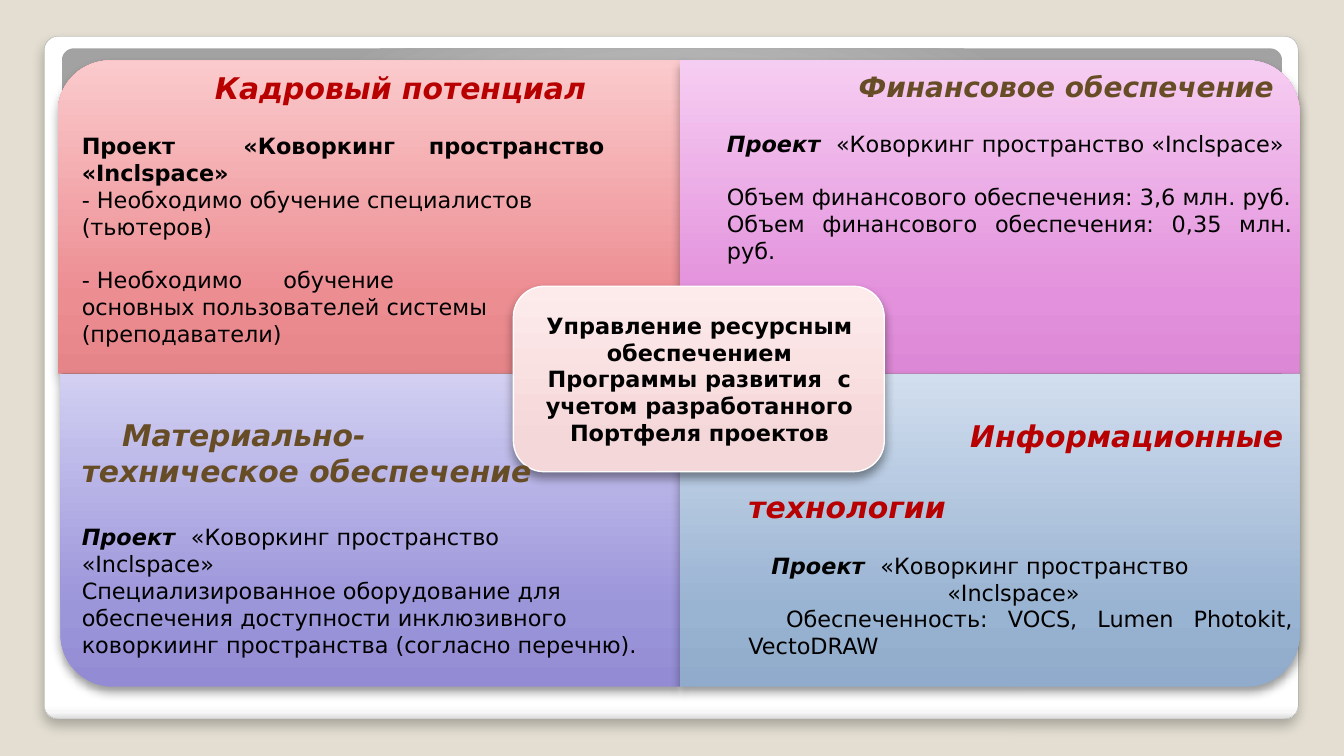
import pptx
import pptx.util
import pptx.dml.color
import pptx.enum.shapes
import pptx.enum.text
import pptx.oxml
import pptx.oxml.ns

Inches, Pt = pptx.util.Inches, pptx.util.Pt
RGB = pptx.dml.color.RGBColor
SHAPE = pptx.enum.shapes.MSO_SHAPE
ALIGN = pptx.enum.text.PP_ALIGN
FONT = "DejaVu Sans"
COLORS = {"bg": "E3DED1", "black": "000000", "white": "FFFFFF", "edge": "A4A4A4",
          "red": "B80000", "brown": "674D26"}
GRADIENTS = {
    "frame": [(0, "FFFFFF"), (98, "FFFFFF"), (99, "F7F7F7"), (100, "DADADA")],
    "header": [(0, "FFFFFF"), (55, "E1E1E1"), (100, "A2A2A2")],
    "staff": [(0, "E68589"), (25, "EC8D92"), (100, "FBCACC")],
    "finance": [(0, "DD88D6"), (25, "E391DC"), (100, "F6CDF2")],
    "equipment": [(0, "938CD4"), (25, "9B95DA"), (100, "D2CFF2")],
    "technology": [(0, "90ABCB"), (25, "99B3D2"), (100, "D1DEEE")],
    "center": [(0, "F4D7D8"), (25, "F6D9DA"), (100, "FDEBEC")],
}
UP = '<a:lin ang="16200000" scaled="0"/>'
DOWN = '<a:lin ang="5400000" scaled="0"/>'
RADIAL = '<a:path path="circle"><a:fillToRect l="50000" t="175000" r="50000" b="-75000"/></a:path>'
PANEL_SHADOW = (40, 5.2, 3)

QUADRANTS = [
    ("staff", 0.43, 0.45, 4.69, 270),
    ("finance", 5.06, 0.45, 4.61, 0),
    ("equipment", 0.45, 2.78, 4.61, 180),
    ("technology", 5.06, 2.78, 4.61, 90),
]
QUADRANT_H = 2.33

L, C, J = ALIGN.LEFT, ALIGN.CENTER, ALIGN.JUSTIFY
PROJECT = ("Проект  ", "bi")
SPACE_NAME = "«Коворкинг пространство «Inclspace»"
TEXTS = [
    ((5.31, 0.47, 4.41, 1.77), [
        dict(runs=[("Финансовое обеспечение", "bi")], size=15, color="brown", indent=0.98),
        dict(runs=[PROJECT, (SPACE_NAME, "")], align=J, before=14.2),
        dict(runs=[("Объем финансового обеспечения: 3,6 млн. руб.", "")], align=J, before=14.2),
        dict(runs=[("Объем финансового обеспечения: 0,35 млн. руб.", "")], align=J),
    ]),
    ((5.47, 3.06, 4.25, 2.05), [
        dict(runs=[("Информационные", "bi")], size=16, color="red", indent=1.65),
        dict(runs=[("технологии", "bi")], size=16, color="red", before=19),
        dict(runs=[PROJECT, ("«Коворкинг пространство", "")], align=J, indent=0.17, before=14.4),
        dict(runs=[("«Inclspace»", "")], align=J, indent=1.48),
        dict(runs=[("Обеспеченность: VOCS, Lumen Photokit, VectoDRAW", "")], align=J, indent=0.28),
    ]),
    ((0.51, 0.47, 4.09, 2.19), [
        dict(runs=[("Кадровый потенциал", "bi")], size=16, color="red", indent=0.99),
        dict(runs=[("Проект  " + SPACE_NAME, "b")], align=J, before=14.2),
        dict(runs=[("- Необходимо обучение специалистов (тьютеров)", "")]),
        dict(runs=[("- Необходимо\tобучение\nосновных пользователей системы (преподаватели)", "")],
             before=14.4, tab=1.42),
    ]),
    ((0.51, 3.05, 4.49, 1.92), [
        dict(runs=[("Материально-\nтехническое обеспечение", "bi")],
             size=16, color="brown", indent=0.3),
        dict(runs=[PROJECT, ("«Коворкинг пространство ", "")], before=19),
        dict(runs=[("«Inclspace» ", "")]),
        dict(runs=[("Специализированное оборудование для", "")]),
        dict(runs=[("обеспечения доступности инклюзивного коворкиинг пространства "
                    "(согласно перечню).", "")]),
    ]),
]
CENTER_TEXT = [dict(runs=[("Управление ресурсным обеспечением Программы развития  с "
                           "учетом разработанного Портфеля проектов", "b")], align=C)]


def xml(tag, body, attrs=""):
    ns = pptx.oxml.ns.nsdecls("a")
    return pptx.oxml.parse_xml(f"<a:{tag} {ns} {attrs}>{body}</a:{tag}>")


def add_panel(kind, box, name, direction=UP, shadow=None, line=None, rotation=0, radius=None):
    sp = slide.shapes.add_shape(kind, *map(Inches, box))
    sp.rotation = rotation
    if radius is not None:
        sp.adjustments[0] = radius
    if line:
        sp.line.color.rgb = RGB.from_string(COLORS[line[0]])
        sp.line.width = Pt(line[1])
    else:
        sp.line.fill.background()
    stops = "".join(f'<a:gs pos="{pos * 1000}"><a:srgbClr val="{c}"/></a:gs>'
                    for pos, c in GRADIENTS[name])
    props = sp.element.spPr
    fill = xml("gradFill", f"<a:gsLst>{stops}</a:gsLst>{direction}", 'rotWithShape="0"')
    props.find(pptx.oxml.ns.qn("a:prstGeom")).addnext(fill)
    effect = ""
    if shadow:
        alpha, blur, dist = shadow
        effect = (f'<a:outerShdw blurRad="{Pt(blur)}" dist="{Pt(dist)}" dir="5400000" '
                  f'rotWithShape="0"><a:srgbClr val="{COLORS["black"]}">'
                  f'<a:alpha val="{alpha * 1000}"/></a:srgbClr></a:outerShdw>')
    props.append(xml("effectLst", effect))


def add_text(box, paragraphs, anchor=pptx.enum.text.MSO_ANCHOR.TOP):
    tf = slide.shapes.add_textbox(*map(Inches, box)).text_frame
    tf.word_wrap = True
    tf.vertical_anchor = anchor
    for i, item in enumerate(paragraphs):
        p = tf.paragraphs[0] if i == 0 else tf.add_paragraph()
        p.alignment = item.get("align", L)
        p.space_before = Pt(item.get("before", 0))
        props = p._p.get_or_add_pPr()
        props.set("indent", str(Inches(item.get("indent", 0))))
        if "tab" in item:
            props.append(xml("tabLst", f'<a:tab pos="{Inches(item["tab"])}" algn="l"/>'))
        for text, style in item["runs"]:
            for j, part in enumerate(text.split("\n")):
                if j:
                    p.add_line_break()
                r = p.add_run()
                r.text = part
                r.font.name = FONT
                r.font.size = Pt(item.get("size", 12))
                r.font.bold = "b" in style
                r.font.italic = "i" in style
                r.font.color.rgb = RGB.from_string(COLORS[item.get("color", "black")])
    return tf


prs = pptx.Presentation()
prs.slide_width, prs.slide_height = Inches(10), Inches(10) * 9 // 16
slide = prs.slides.add_slide(prs.slide_layouts[6])
slide.background.fill.solid()
slide.background.fill.fore_color.rgb = RGB.from_string(COLORS["bg"])

add_panel(SHAPE.ROUNDED_RECTANGLE, (0.33, 0.27, 9.33, 5.08), "frame", DOWN,
          (25, 6, 4), ("edge", 0.16), radius=0.02)
add_panel(SHAPE.ROUNDED_RECTANGLE, (0.46, 0.36, 9.08, 4.5), "header", RADIAL, radius=0.02)

for name, x, y, w, rotation in QUADRANTS:
    box = (x, y, w, QUADRANT_H)
    if rotation % 180:
        shift = (w - QUADRANT_H) / 2
        box = (x + shift, y - shift, QUADRANT_H, w)
    add_panel(SHAPE.ROUND_1_RECTANGLE, box, name, shadow=PANEL_SHADOW, rotation=rotation)

add_panel(SHAPE.ROUNDED_RECTANGLE, (3.82, 2.13, 2.76, 1.38), "center",
          shadow=PANEL_SHADOW, line=("white", 0.75))
tf = add_text((3.89, 2.2, 2.63, 1.24), CENTER_TEXT, pptx.enum.text.MSO_ANCHOR.MIDDLE)
tf.margin_left = tf.margin_right = tf.margin_top = tf.margin_bottom = Inches(0.05)

for box, paragraphs in TEXTS:
    add_text(box, paragraphs)

prs.save("out.pptx")
